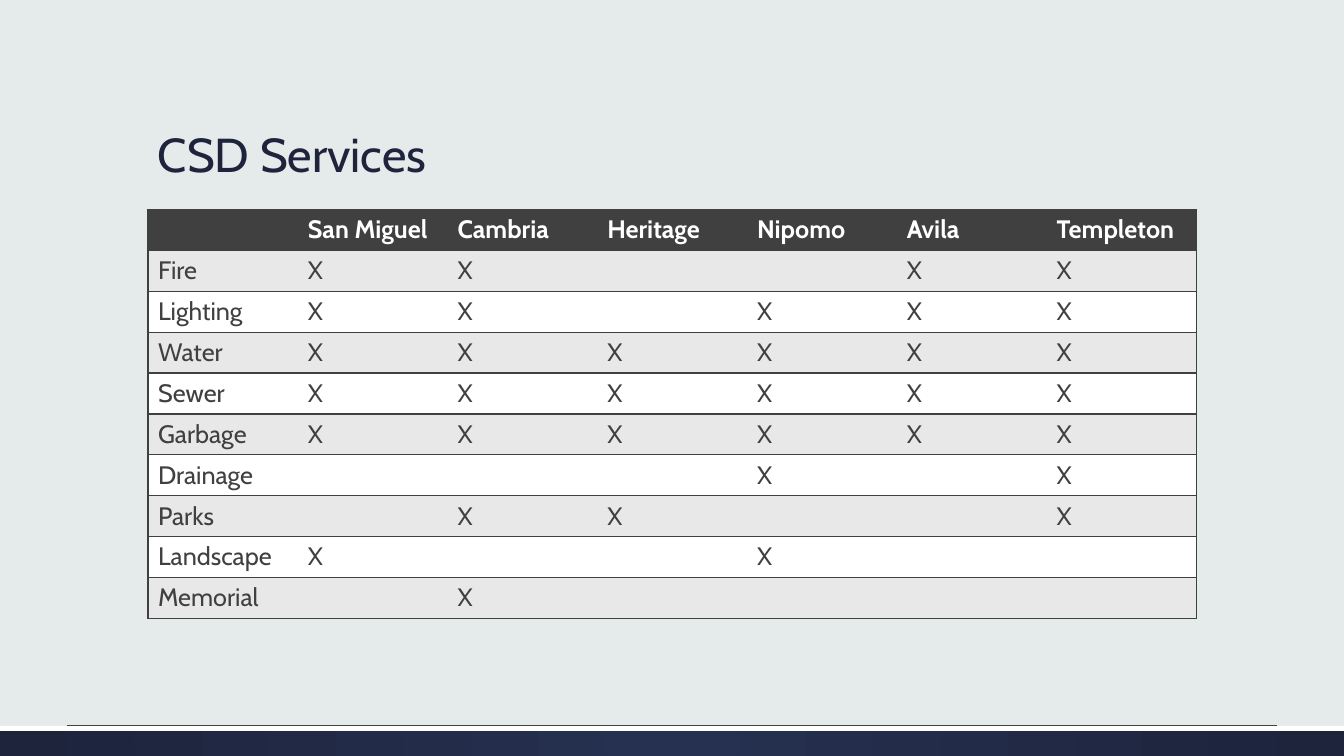
from lxml import etree
from pptx import Presentation
from pptx.dml.color import RGBColor
from pptx.enum.shapes import MSO_CONNECTOR, MSO_SHAPE
from pptx.enum.text import MSO_ANCHOR
from pptx.oxml import parse_xml
from pptx.oxml.ns import nsdecls, qn
from pptx.util import Cm, Pt

RECT = MSO_SHAPE.RECTANGLE
LINE = MSO_CONNECTOR.STRAIGHT
BOTTOM = MSO_ANCHOR.BOTTOM

# Content
TITLE = "CSD Services"
TOWNS = ["San Miguel", "Cambria", "Heritage", "Nipomo", "Avila", "Templeton"]
SERVICES = [  # one mark per town, in the order above
    ("Fire", "XX--XX"),
    ("Lighting", "XX-XXX"),
    ("Water", "XXXXXX"),
    ("Sewer", "XXXXXX"),
    ("Garbage", "XXXXXX"),
    ("Drainage", "---X-X"),
    ("Parks", "-XX--X"),
    ("Landscape", "X--X--"),
    ("Memorial", "-X----"),
]

FONT = "Cabin"
COLORS = {
    "back": "E5EAEA", "navy": "1D243C", "glow": "263050",
    "dark": "404040", "band": "E8E8E8", "white": "FFFFFF",
}
PLAIN_STYLE = "{2D5ABB26-0587-4C30-8999-92F81FD0307C}"

# Layout
WIDTH, HEIGHT = Cm(33.87), Cm(19.05)
LEFT, SPAN = Cm(3.73), Cm(26.42)
TABLE_TOP, ROW = Cm(5.28), Cm(1.03)
BAR = Cm(0.76)
EDGE = Cm(1.7)


def rgb(name):
    return RGBColor.from_string(COLORS[name])


def style(para, size, color, bold=False):
    font = para.font
    font.name, font.size, font.bold = FONT, Pt(size), bold
    font.color.rgb = rgb(color)


def add_bar(height):
    bar = slide.shapes.add_shape(RECT, 0, HEIGHT - BAR, WIDTH, height)
    bar.shadow.inherit = False
    bar.line.fill.background()
    return bar


def add_border(cell, side):
    cell._tc.get_or_add_tcPr().append(parse_xml(
        f'<a:ln{side} {nsdecls("a")} w="12700"><a:solidFill>'
        f'<a:srgbClr val="{COLORS["dark"]}"/></a:solidFill></a:ln{side}>'))


prs = Presentation()
prs.slide_width, prs.slide_height = WIDTH, HEIGHT
slide = prs.slides.add_slide(prs.slide_layouts[6])
slide.background.fill.solid()
slide.background.fill.fore_color.rgb = rgb("back")

# Footer: radial navy bar, white strip, thin rule
bar = add_bar(BAR)
bar.fill.gradient()
for stop, pos, name in zip(bar.fill.gradient_stops, (0, 1), ("glow", "navy")):
    stop.position = pos
    stop.color.rgb = rgb(name)
grad = bar._element.spPr.find(qn("a:gradFill"))
grad.replace(grad.find(qn("a:lin")), parse_xml(
    f'<a:path {nsdecls("a")} path="circle">'
    '<a:fillToRect l="50000" t="50000" r="50000" b="50000"/></a:path>'))

strip = add_bar(Cm(0.13))
strip.fill.solid()
strip.fill.fore_color.rgb = rgb("white")

level = HEIGHT - BAR - Cm(0.02)
rule = slide.shapes.add_connector(LINE, EDGE, level, WIDTH - EDGE, level)
rule.line.width = Pt(0.75)
rule.line.color.rgb = rgb("dark")
etree.SubElement(rule._element.spPr, qn("a:effectLst"))

# Title
box = slide.shapes.add_textbox(LEFT, Cm(1.3), SPAN, Cm(3.43))
frame = box.text_frame
frame.word_wrap = True
frame.vertical_anchor = BOTTOM
frame.text = TITLE
frame.paragraphs[0].line_spacing = 0.9
style(frame.paragraphs[0], 34, "navy")

# Table
rows = [["", *TOWNS]]
rows += [[name, *marks.replace("-", " ")] for name, marks in SERVICES]
count = len(rows[0])
table = slide.shapes.add_table(
    len(rows), count, LEFT, TABLE_TOP, SPAN, ROW * len(rows)).table
table._tbl.tblPr.find(qn("a:tableStyleId")).text = PLAIN_STYLE
for col in table.columns:
    col.width = SPAN // count

for r, texts in enumerate(rows):
    table.rows[r].height = ROW
    head = r == 0
    fill = "dark" if head else "band" if r % 2 else "white"
    for c, text in enumerate(texts):
        cell = table.cell(r, c)
        cell.text = text.strip()
        style(cell.text_frame.paragraphs[0], 18,
              "white" if head else "dark", head)
        if c == 0:
            add_border(cell, "L")
        if c == count - 1:
            add_border(cell, "R")
        add_border(cell, "T")
        add_border(cell, "B")
        cell.fill.solid()
        cell.fill.fore_color.rgb = rgb(fill)

prs.save("out.pptx")
